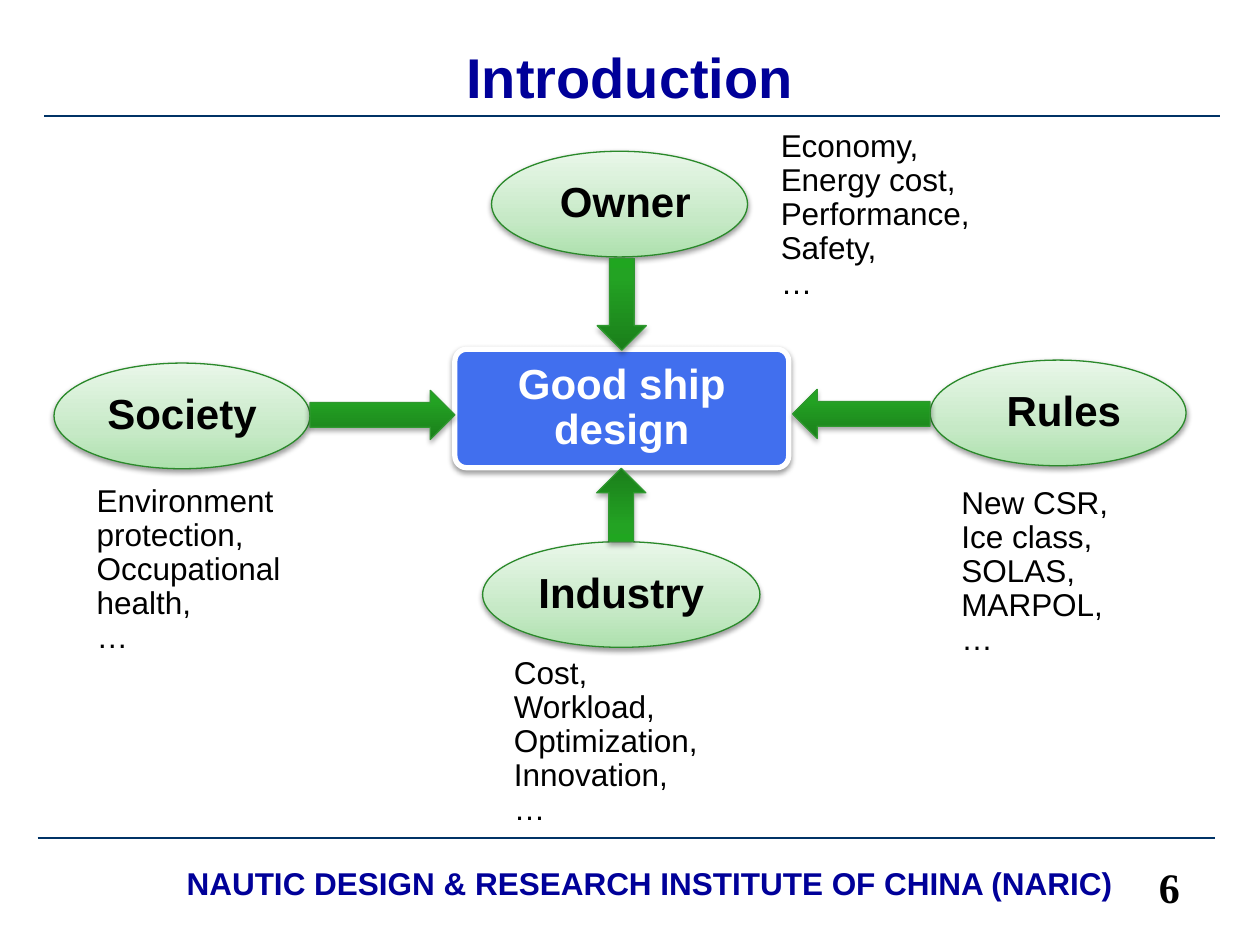
from dataclasses import dataclass

from lxml.etree import SubElement
from pptx import Presentation
from pptx.dml.color import RGBColor
from pptx.enum.shapes import MSO_CONNECTOR, MSO_SHAPE
from pptx.enum.text import MSO_ANCHOR, PP_ALIGN
from pptx.oxml.ns import qn
from pptx.util import Cm, Pt


@dataclass(frozen=True)
class Theme:
    sans: str = "Arial"
    serif: str = "Times New Roman"
    navy: str = "000099"
    rule: str = "003366"
    black: str = "000000"
    white: str = "FFFFFF"
    blue: str = "416FEE"
    oval_line: str = "2A892A"
    arrow_line: str = "2F982F"
    oval_stops: tuple = ((0, "ADE1AD"), (35, "C6E9C6"), (100, "E9F7E9"))
    arrow_stops: tuple = ((0, "1B7E1B"), (80, "23A323"), (100, "20A620"))
    title_size: int = 32
    label_size: int = 24
    body_size: int = 18


THEME = Theme()


@dataclass(frozen=True)
class Factor:
    """A party that shapes the design; every box is left, top, width, height in cm."""
    name: str
    oval: tuple
    arrow_kind: MSO_SHAPE
    arrow: tuple
    concerns: tuple
    note: tuple
    upward: bool = True


FACTORS = (
    Factor(" Rules", (18.75, 7.26, 5.16, 2.13), MSO_SHAPE.LEFT_ARROW, (15.98, 7.85, 2.77, 0.99),
           ("New CSR,", "Ice class,", "SOLAS,", "MARPOL,", "…"), (19.13, 9.7, 4.39, 3.71)),
    Factor(" Owner", (9.91, 3.05, 5.16, 2.13), MSO_SHAPE.DOWN_ARROW, (12.04, 5.21, 0.99, 1.85),
           ("Economy,", "Energy cost,", "Performance,", "Safety,", "…"), (15.49, 2.51, 4.8, 3.71)),
    Factor("Society", (1.09, 7.32, 5.16, 2.13), MSO_SHAPE.RIGHT_ARROW, (6.25, 7.87, 2.92, 0.99),
           ("Environment protection, Occupational health,", "…"), (1.7, 9.65, 4.39, 3.71)),
    Factor("Industry", (9.73, 10.92, 5.59, 2.13), MSO_SHAPE.UP_ARROW, (12.03, 9.44, 0.99, 1.47),
           ("Cost, Workload, Optimization,", "Innovation,", "…"), (10.11, 13.13, 4.8, 3.71),
           upward=False),
)


def rgb(value):
    return RGBColor.from_string(value)


def cm_box(box):
    return [Cm(length) for length in box]


def write(frame, lines, size, color, font=THEME.sans, bold=True,
          align=PP_ALIGN.CENTER, spacing=0.9, anchor=MSO_ANCHOR.MIDDLE):
    frame.word_wrap = True
    frame.vertical_anchor = anchor
    for index, line in enumerate(lines):
        paragraph = frame.paragraphs[0] if index == 0 else frame.add_paragraph()
        paragraph.alignment = align
        paragraph.line_spacing = spacing
        run = paragraph.add_run()
        run.text = line
        run.font.name = font
        run.font.size = Pt(size)
        run.font.bold = bold
        run.font.color.rgb = rgb(color)


def add_text(slide, box, lines, size, color, **style):
    frame = slide.shapes.add_textbox(*cm_box(box)).text_frame
    write(frame, lines, size, color, **style)


def add_rule(slide, left, right, y):
    rule = slide.shapes.add_connector(MSO_CONNECTOR.STRAIGHT, Cm(left), Cm(y), Cm(right), Cm(y))
    rule.line.color.rgb = rgb(THEME.rule)
    rule.line.width = Pt(1)
    SubElement(rule._element.spPr, qn("a:effectLst"))


def add_outlined(slide, kind, box, line_color, line_width):
    shape = slide.shapes.add_shape(kind, *cm_box(box))
    shape.shadow.inherit = False
    shape.line.color.rgb = rgb(line_color)
    shape.line.width = Pt(line_width)
    return shape


def cast_shadow(shape, opacity, distance):
    """Drop a soft black shadow straight down; opacity in percent, distance in points."""
    effects = shape._element.spPr.find(qn("a:effectLst"))
    shadow = SubElement(effects, qn("a:outerShdw"), blurRad=str(Pt(3.1)), dist=str(Pt(distance)),
                        dir="5400000", rotWithShape="0")
    color = SubElement(shadow, qn("a:srgbClr"), val=THEME.black)
    SubElement(color, qn("a:alpha"), val=str(opacity * 1000))


def fill_gradient(shape, stops, upward=True):
    """Run the colour stops from bottom to top, or from top to bottom."""
    shape.fill.gradient()
    shape.fill.gradient_angle = 90 if upward else 270
    stop_list = shape._element.spPr.find(qn("a:gradFill")).find(qn("a:gsLst"))
    for default_stop in list(stop_list):
        stop_list.remove(default_stop)
    for percent, color in stops:
        stop = SubElement(stop_list, qn("a:gs"), pos=str(percent * 1000))
        SubElement(stop, qn("a:srgbClr"), val=color)


def add_goal(slide):
    goal = add_outlined(slide, MSO_SHAPE.ROUNDED_RECTANGLE, (9.17, 7.04, 6.73, 2.39),
                        THEME.white, 3)
    goal.adjustments[0] = 0.1
    goal.fill.solid()
    goal.fill.fore_color.rgb = rgb(THEME.blue)
    cast_shadow(goal, 38, 1.6)
    write(goal.text_frame, ["Good ship design"], THEME.label_size, THEME.white)


def add_factor(slide, factor):
    oval = add_outlined(slide, MSO_SHAPE.OVAL, factor.oval, THEME.oval_line, 0.75)
    fill_gradient(oval, THEME.oval_stops)
    cast_shadow(oval, 38, 1.6)
    write(oval.text_frame, [factor.name], THEME.label_size, THEME.black)

    arrow = add_outlined(slide, factor.arrow_kind, factor.arrow, THEME.arrow_line, 0.75)
    fill_gradient(arrow, THEME.arrow_stops, factor.upward)
    cast_shadow(arrow, 35, 1.8)

    add_text(slide, factor.note, factor.concerns, THEME.body_size, THEME.black,
             bold=False, align=PP_ALIGN.LEFT, anchor=MSO_ANCHOR.TOP)


def add_page_furniture(slide):
    add_rule(slide, 0.76, 24.49, 16.89)
    add_rule(slide, 0.89, 24.59, 2.34)
    add_text(slide, (2.9, 17.45, 20.4, 0.86),
             ["NAUTIC DESIGN & RESEARCH INSTITUTE OF CHINA (NARIC)"],
             THEME.body_size, THEME.navy, spacing=0.8, anchor=MSO_ANCHOR.TOP)
    add_text(slide, (23.11, 17.35, 1.6, 1.17), ["6"], THEME.label_size, THEME.black,
             font=THEME.serif, align=PP_ALIGN.LEFT, anchor=MSO_ANCHOR.TOP)
    add_text(slide, (1.27, 0.76, 22.86, 1.55), ["Introduction"],
             THEME.title_size, THEME.navy, spacing=1.0)


def main():
    deck = Presentation()
    deck.slide_width, deck.slide_height = Cm(25.4), Cm(19.05)
    slide = deck.slides.add_slide(deck.slide_layouts[6])
    add_page_furniture(slide)
    add_goal(slide)
    for factor in FACTORS:
        add_factor(slide, factor)
    deck.save("out.pptx")


if __name__ == "__main__":
    main()
